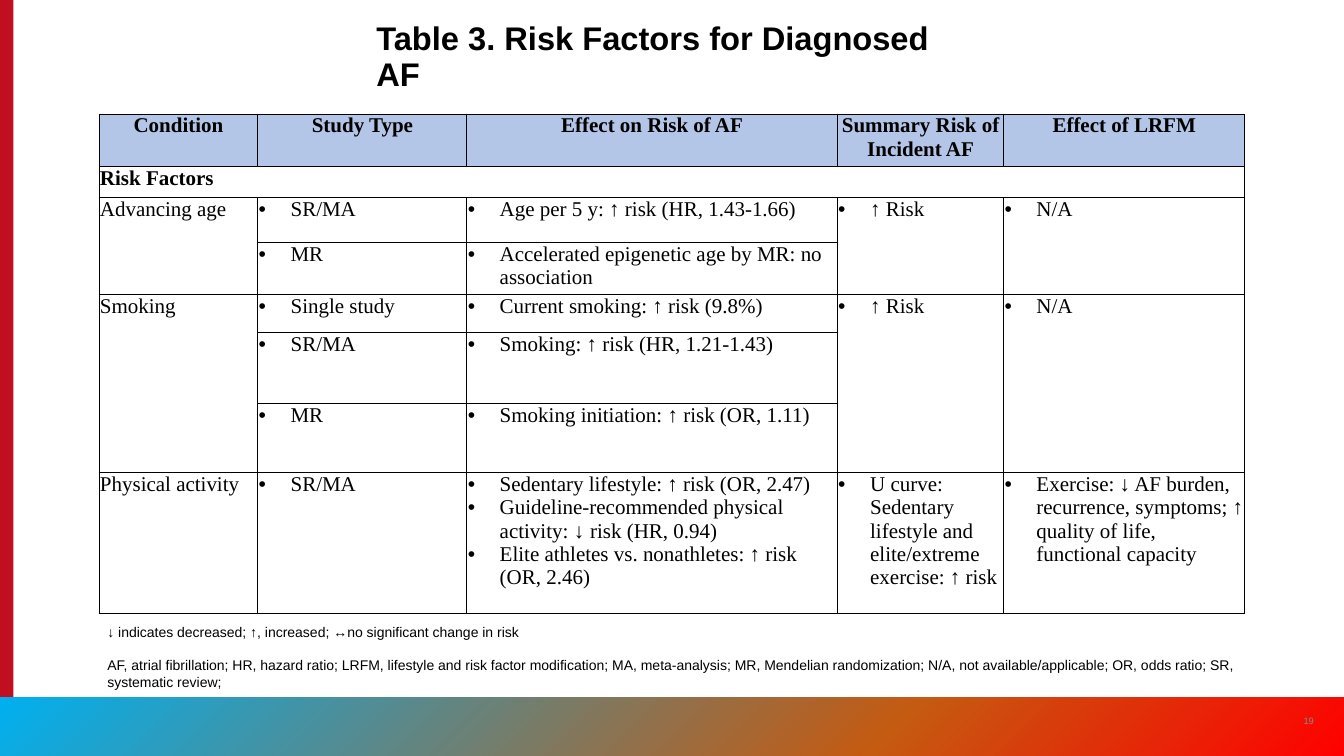
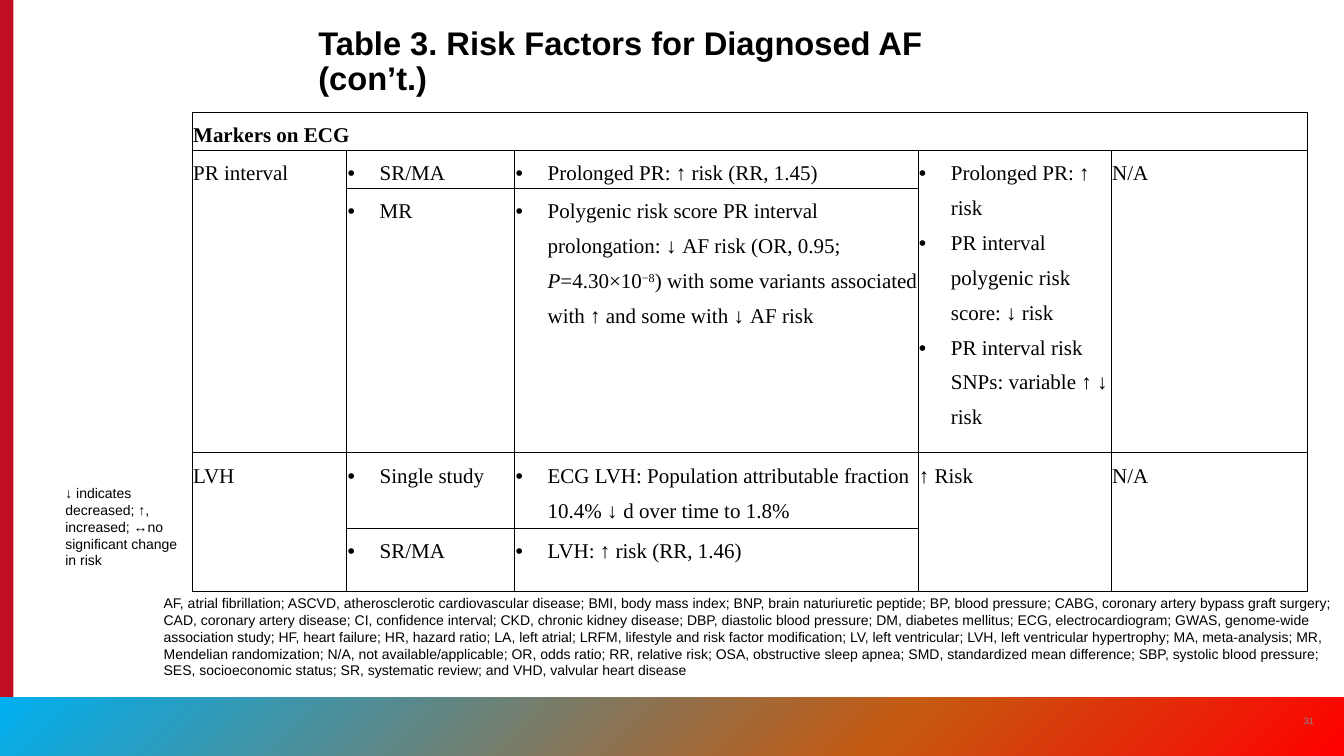
from dataclasses import dataclass

from pptx import Presentation
from pptx.dml.color import RGBColor
from pptx.enum.shapes import MSO_SHAPE as Shape
from pptx.enum.text import MSO_ANCHOR as Anchor, MSO_AUTO_SIZE as Auto, PP_ALIGN as Align
from pptx.oxml import parse_xml
from pptx.oxml.ns import nsdecls
from pptx.util import Inches, Pt


@dataclass(frozen=True)
class Theme:
    ink: str = "000000"
    grey: str = "8A8B8A"
    red: str = "C10E21"
    head: str = "B4C6E7"
    band: tuple = ((0, "00B0F0"), (66, "C55A11"), (100, "FF0000"))
    sans: str = "Arial"
    serif: str = "Times New Roman"
    title: int = 28
    body: int = 18
    note: int = 12
    page: int = 8


def xml(tag, inner="", attrs=""):
    return parse_xml(f"<a:{tag} {nsdecls('a')} {attrs}>{inner}</a:{tag}>")


def tint(color):
    return f'<a:srgbClr val="{color}"/>'


class Deck:
    def __init__(self, theme):
        self.look = theme
        self.prs = Presentation()
        self.prs.slide_width, self.prs.slide_height = Inches(16), Inches(9)

    def start(self, title, box, page):
        """Open a slide with its side bar, bottom band, title and page number."""
        look = self.look
        self.slide = self.prs.slides.add_slide(self.prs.slide_layouts[5])
        bar = self.rect(0, 0, 0.16, 9)
        bar.fill.solid()
        bar.fill.fore_color.rgb = RGBColor.from_string(look.red)
        band = self.rect(0, 8.3, 16, 0.7)
        stops = "".join(f'<a:gs pos="{pos * 1000}">{tint(color)}</a:gs>'
                        for pos, color in look.band)
        geom = band._element.spPr.find("{*}prstGeom")
        geom.addnext(xml("gradFill", f'<a:gsLst>{stops}</a:gsLst><a:lin ang="2700000" scaled="0"/>'))
        self.title(title, box)
        self.note(page, (15.34, 8.34, 0.48, 0.48), look.page, look.grey,
                  Align.CENTER, Anchor.MIDDLE)

    def rect(self, *box):
        shape = self.slide.shapes.add_shape(Shape.RECTANGLE, *map(Inches, box))
        shape.shadow.inherit = False
        shape.line.fill.background()
        return shape

    def title(self, text, box):
        shape = self.slide.shapes.title
        shape.left, shape.top, shape.width, shape.height = map(Inches, box)
        frame = shape.text_frame
        frame.auto_size = Auto.NONE
        frame.word_wrap = True
        frame.vertical_anchor = Anchor.BOTTOM
        para = frame.paragraphs[0]
        para.alignment, para.line_spacing = Align.LEFT, 0.9
        self.run(para, text, self.look.title, self.look.sans, bold=True)

    def note(self, text, box, size=None, color=None, align=Align.LEFT, anchor=Anchor.TOP):
        frame = self.slide.shapes.add_textbox(*map(Inches, box)).text_frame
        frame.word_wrap = True
        frame.vertical_anchor = anchor
        para = frame.paragraphs[0]
        para.alignment = align
        self.run(para, text, size or self.look.note, self.look.sans, color)

    def run(self, para, text, size, face, color=None, bold=False):
        run = para.add_run()
        run.text = text
        font = run.font
        font.size, font.name, font.bold = Pt(size), face, bold
        font.color.rgb = RGBColor.from_string(color or self.look.ink)
        return run

    def table(self, spot, cols, highs, rows, head=False, space=None):
        """Fill a grid: a one-item row spans it, None joins the cell above."""
        box = (*spot, sum(cols), sum(highs))
        grid = self.slide.shapes.add_table(len(rows), len(cols), *map(Inches, box)).table
        grid.first_row = grid.horz_banding = False
        for col, wide in zip(grid.columns, cols):
            col.width = Inches(wide)
        for row, high in zip(grid.rows, highs):
            row.height = Inches(high)
        for i, row in enumerate(rows):
            top = head and i == 0
            for j in range(len(cols)):
                self.edge(grid.cell(i, j), "T" if row == [""] else "LRTB", top)
            for j, item in enumerate(row):
                if item is None:
                    continue
                cell = grid.cell(i, j)
                end = i
                while end + 1 < len(rows) and rows[end + 1][0] is None and rows[end + 1][j] is None:
                    end += 1
                last = len(cols) - 1 if len(row) == 1 else j
                if (end, last) != (i, j):
                    cell.merge(grid.cell(end, last))
                if item:
                    self.fill(cell, item, top, top or len(row) == 1, space)

    def edge(self, cell, sides, top):
        props = cell._tc.get_or_add_tcPr()
        for side in "LRTB":
            ink = f"<a:solidFill>{tint(self.look.ink)}</a:solidFill>"
            props.append(xml(f"ln{side}", ink if side in sides else "<a:noFill/>", 'w="12700"'))
        cell.margin_left = cell.margin_right = Inches(0.01)
        cell.margin_top = cell.margin_bottom = 0
        if top:
            cell.fill.solid()
            cell.fill.fore_color.rgb = RGBColor.from_string(self.look.head)
        else:
            cell.fill.background()

    def fill(self, cell, item, top, bold, space):
        """Write a string as plain text, a list as bullets."""
        dots = isinstance(item, list)
        frame = cell.text_frame
        for k, line in enumerate(item if dots else [item]):
            para = frame.add_paragraph() if k else frame.paragraphs[0]
            if dots:
                props = para._p.get_or_add_pPr()
                props.set("marL", str(Inches(0.38)))
                props.set("indent", str(-Inches(0.38)))
                props.append(xml("buFont", attrs='typeface="Arial"'))
                props.append(xml("buChar", attrs='char="•"'))
            para.alignment = Align.CENTER if top else Align.LEFT
            para.line_spacing = space
            for part in [line] if isinstance(line, str) else line:
                text, kind = (part, "") if isinstance(part, str) else part
                face = self.look.sans if kind == "sans" else self.look.serif
                run = self.run(para, text, self.look.body, face, bold=bold)
                if kind == "ital":
                    run.font.italic = True
                elif kind == "sup":
                    run._r.get_or_add_rPr().set("baseline", "30000")


DOWN = ("↓ ", "sans")
KEY = "↓ indicates decreased; ↑, increased; ↔no significant change in risk"

TERMS = {
    "AF": "atrial fibrillation",
    "ASCVD": "atherosclerotic cardiovascular disease",
    "BMI": "body mass index",
    "BNP": "brain naturiuretic peptide",
    "BP": "blood pressure",
    "CABG": "coronary artery bypass graft surgery",
    "CAD": "coronary artery disease",
    "CI": "confidence interval",
    "CKD": "chronic kidney disease",
    "DBP": "diastolic blood pressure",
    "DM": "diabetes mellitus",
    "ECG": "electrocardiogram",
    "GWAS": "genome-wide association study",
    "HF": "heart failure",
    "HR": "hazard ratio",
    "LA": "left atrial",
    "LRFM": "lifestyle and risk factor modification",
    "LV": "left ventricular",
    "LVH": "left ventricular hypertrophy",
    "MA": "meta-analysis",
    "MR": "Mendelian randomization",
    "N/A": "not available/applicable",
    "OR": "odds ratio",
    "RR": "relative risk",
    "OSA": "obstructive sleep apnea",
    "SMD": "standardized mean difference",
    "SBP": "systolic blood pressure",
    "SES": "socioeconomic status",
    "SR": "systematic review",
    "and VHD": "valvular heart disease",
}


def gloss(keys):
    return "; ".join(f"{key}, {TERMS[key]}" for key in keys)


FACTORS = [
    ["Condition", "Study Type", "Effect on Risk of AF", "Summary Risk of Incident AF",
     "Effect of LRFM"],
    ["Risk Factors"],
    ["Advancing age", ["SR/MA"], ["Age per 5 y: ↑ risk (HR, 1.43-1.66)"], ["↑ Risk"], ["N/A"]],
    [None, ["MR"], ["Accelerated epigenetic age by MR: no association"], None, None],
    ["Smoking", ["Single study"], ["Current smoking: ↑ risk (9.8%)"], ["↑ Risk"], ["N/A"]],
    [None, ["SR/MA"], ["Smoking: ↑ risk (HR, 1.21-1.43)"], None, None],
    [None, ["MR"], ["Smoking initiation: ↑ risk (OR, 1.11)"], None, None],
    ["Physical activity", ["SR/MA"],
     ["Sedentary lifestyle: ↑ risk (OR, 2.47)",
      ("Guideline-recommended physical activity: ", DOWN, "risk (HR, 0.94)"),
      "Elite athletes vs. nonathletes: ↑ risk (OR, 2.46)"],
     ["U curve: Sedentary lifestyle and elite/extreme exercise: ↑ risk"],
     ["Exercise: ↓ AF burden, recurrence, symptoms; ↑ quality of life, functional capacity"]],
]

MARKERS = [
    ["Markers on ECG"],
    ["PR interval", ["SR/MA"], ["Prolonged PR: ↑ risk (RR, 1.45)"],
     ["Prolonged PR: ↑ risk", "PR interval polygenic risk score: ↓ risk",
      "PR interval risk SNPs: variable ↑ ↓ risk"], "N/A"],
    [None, ["MR"],
     [("Polygenic risk score PR interval prolongation: ", DOWN, "AF risk (OR, 0.95; ",
       ("P", "ital"), "=4.30×10", ("−8", "sup"),
       ") with some variants associated with ↑ and some with ", DOWN, "AF risk")],
     None, None],
    ["LVH", ["Single study"],
     [("ECG LVH: Population attributable fraction 10.4% ", DOWN, "d over time to 1.8%")],
     "↑ Risk", "N/A"],
    [None, ["SR/MA"], ["LVH: ↑ risk (RR, 1.46)"], None, None],
    [""],
]


def main():
    deck = Deck(Theme())

    deck.start("Table 3. Risk Factors for Diagnosed AF", (4.38, 0.58, 7.25, 0.58), "19")
    deck.table((1.18, 1.36), (1.89, 2.49, 4.41, 1.98, 2.87),
               (0.62, 0.37, 0.54, 0.62, 0.45, 0.85, 0.82, 1.67), FACTORS, head=True)
    deck.note(KEY, (1.18, 7.37, 8.06, 0.3))
    used = ("AF", "HR", "LRFM", "MA", "MR", "N/A", "OR", "SR")
    deck.note(gloss(used) + ";", (1.18, 7.77, 13.65, 0.5))

    deck.start("Table 3. Risk Factors for Diagnosed AF (con’t.)", (3.69, 0.63, 8.62, 0.58), "31")
    deck.table((2.29, 1.34), (1.84, 2, 4.8, 2.3, 2.34),
               (0.41, 0.41, 3.03, 0.86, 0.75, 0.41), MARKERS, space=1.5)
    deck.note(KEY, (0.68, 5.72, 1.57, 1.11))
    deck.note(gloss(TERMS), (1.85, 7.03, 14.15, 1.11))

    deck.prs.save("out.pptx")


if __name__ == "__main__":
    main()
